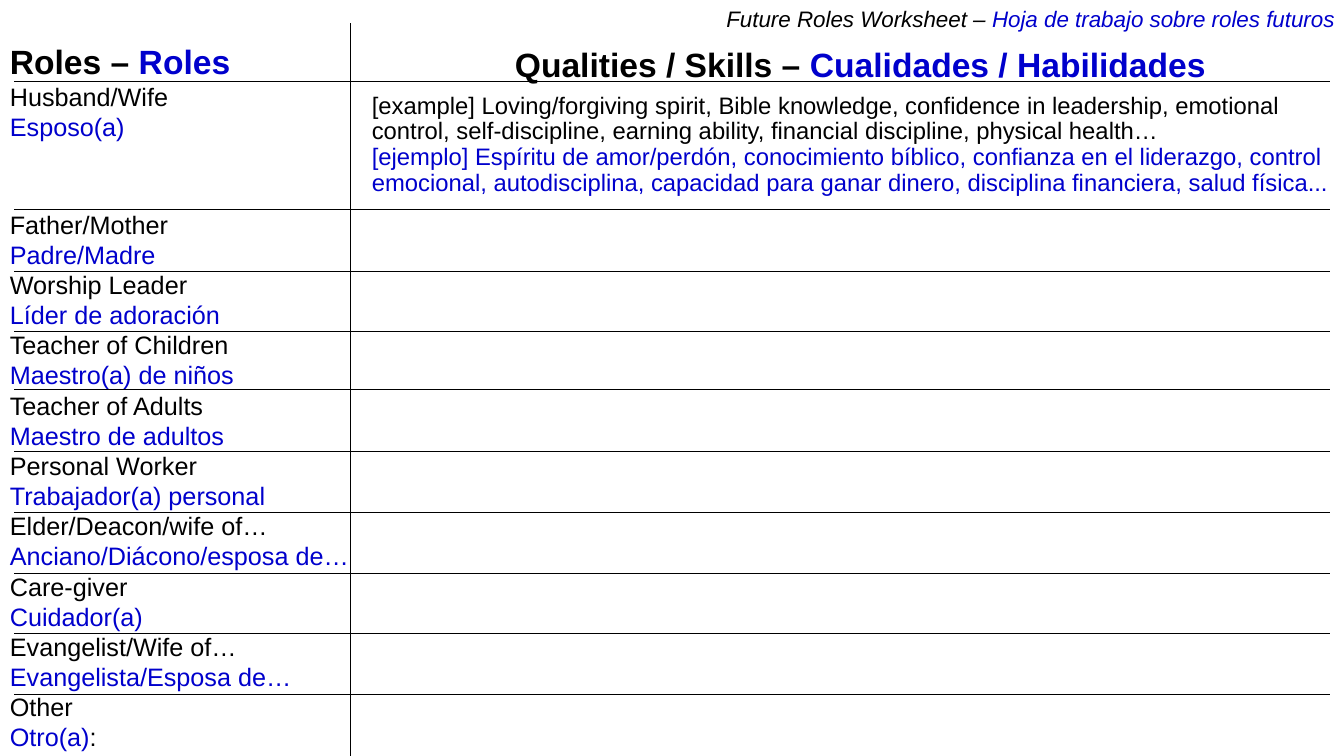
"""Build the bilingual future roles worksheet slide."""
import pptx
import pptx.dml.color
import pptx.enum.shapes
import pptx.enum.text
import pptx.oxml
import pptx.util
from dataclasses import dataclass

Pt = pptx.util.Pt
ALIGN = pptx.enum.text.PP_ALIGN


@dataclass(frozen=True)
class Theme:
    font: str = "Arial"
    english: str = "000000"
    spanish: str = "0000CC"
    rule: str = "000000"
    title: int = 16
    heading: int = 24
    role: int = 18
    example: int = 17


theme = Theme()
prs = pptx.Presentation()
prs.slide_width, prs.slide_height = Pt(960), Pt(540)
s = prs.slides.add_slide(prs.slide_layouts[6])


def add_box(left, top, width, height):
    tf = s.shapes.add_textbox(Pt(left), Pt(top), Pt(width), Pt(height)).text_frame
    tf.word_wrap = True
    return tf


def add_run(p, text, size, color, bold=False, italic=False):
    r = p.add_run()
    r.text = text
    r.font.name = theme.font
    r.font.size = Pt(size)
    r.font.bold = bold
    r.font.italic = italic
    r.font.color.rgb = pptx.dml.color.RGBColor.from_string(color)


tf = add_box(364.3, 0, 596.2, 25.9)
tf.vertical_anchor = pptx.enum.text.MSO_ANCHOR.MIDDLE
p = tf.paragraphs[0]
p.alignment = ALIGN.RIGHT
add_run(p, "Future Roles Worksheet – ", theme.title, theme.english, italic=True)
add_run(p, "Hoja de trabajo sobre roles futuros", theme.title, theme.spanish, italic=True)

roles = [
    ("Husband/Wife", "Esposo(a)"),
    ("Father/Mother", "Padre/Madre"),
    ("Worship Leader", "Líder de adoración"),
    ("Teacher of Children", "Maestro(a) de niños"),
    ("Teacher of Adults", "Maestro de adultos"),
    ("Personal Worker", "Trabajador(a) personal"),
    ("Elder/Deacon/wife of…", "Anciano/Diácono/esposa de…"),
    ("Care-giver", "Cuidador(a)"),
    ("Evangelist/Wife of…", "Evangelista/Esposa de…"),
    ("Other", "Otro(a)"),
]
tf = add_box(0, 25.9, 269.3, 514.1)
p = tf.paragraphs[0]
p.line_spacing = Pt(28.5)
add_run(p, "Roles – ", theme.heading, theme.english, bold=True)
add_run(p, "Roles", theme.heading, theme.spanish, bold=True)
for i, role in enumerate(roles):
    for text, color in zip(role, (theme.english, theme.spanish)):
        p = tf.add_paragraph()
        p.line_spacing = Pt(21.55)
        add_run(p, text, theme.role, color)
    if i == 0:
        p.space_after = Pt(48.3)
add_run(p, ":", theme.role, theme.english)

p = add_box(269.3, 13.7, 690.5, 47.5).paragraphs[0]
p.alignment = ALIGN.CENTER
p.line_spacing = 1.5
add_run(p, "Qualities / Skills – ", theme.heading, theme.english, bold=True)
add_run(p, "Cualidades / Habilidades", theme.heading, theme.spanish, bold=True)

tf = add_box(258.5, 63.4, 715, 100)
p = tf.paragraphs[0]
p.line_spacing = 0.9
add_run(p, "[example] Loving/forgiving spirit, Bible knowledge, confidence in leadership, emotional",
        theme.example, theme.english)
p.add_line_break()
add_run(p, "control, self-discipline, earning ability, financial discipline, physical health…",
        theme.example, theme.english)
p = tf.add_paragraph()
p.line_spacing = 0.9
add_run(p, "[ejemplo] Espíritu de amor/perdón, conocimiento bíblico, confianza en el liderazgo, "
        "control emocional, autodisciplina, capacidad para ganar dinero, disciplina financiera, "
        "salud física...", theme.example, theme.spanish)

row_rules = [58.3, 149.8, 193.7, 236.9, 277.9, 322.6, 365.8, 409.7, 452.2, 496.1]
rules = [(10.1, y, 949.7, y) for y in row_rules] + [(250.6, 16.6, 250.6, 540)]
for x1, y1, x2, y2 in rules:
    line = s.shapes.add_connector(pptx.enum.shapes.MSO_CONNECTOR.STRAIGHT,
                                  Pt(x1), Pt(y1), Pt(x2), Pt(y2))
    line.line.width = Pt(0.75)
    line.line.color.rgb = pptx.dml.color.RGBColor.from_string(theme.rule)
    line._element.spPr.append(pptx.oxml.parse_xml(
        '<a:effectLst xmlns:a="http://schemas.openxmlformats.org/drawingml/2006/main"/>'))

prs.save("out.pptx")
